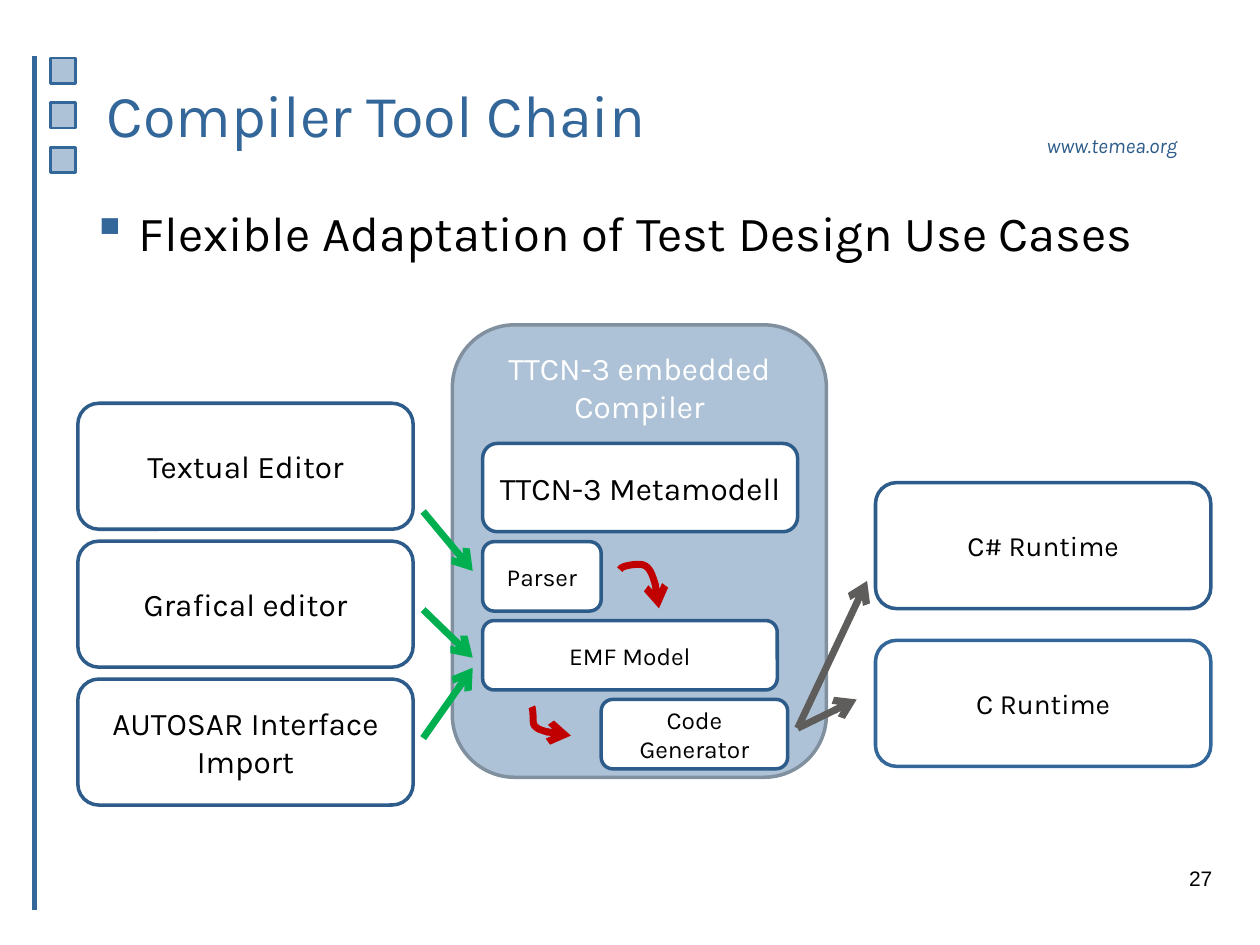
from lxml.etree import SubElement
from pptx import Presentation
from pptx.dml.color import RGBColor
from pptx.enum.shapes import MSO_CONNECTOR, MSO_SHAPE
from pptx.enum.text import MSO_ANCHOR, PP_ALIGN
from pptx.oxml.ns import qn
from pptx.util import Cm, Pt

BLUE = RGBColor(0x33, 0x66, 0x99)
DARK_BLUE = RGBColor(0x2D, 0x5C, 0x8A)
PALE_BLUE = RGBColor(0xAE, 0xC2, 0xD7)
SLATE = RGBColor(0x81, 0x90, 0x9F)
GRAY = RGBColor(0x5F, 0x5C, 0x5C)
GREEN = RGBColor(0x00, 0xB0, 0x50)
RED = RGBColor(0xC0, 0x00, 0x00)
BLACK = RGBColor(0, 0, 0)
WHITE = RGBColor(255, 255, 255)

# Content; all places and sizes are in centimetres
TITLE = "Compiler Tool Chain"
WEBSITE = "www.temea.org"
BULLET = "Flexible Adaptation of Test Design Use Cases"
PAGE_NUMBER = "27"
COMPILER = "TTCN-3 embedded Compiler"
EDITORS = ["Textual Editor", "Grafical editor", "AUTOSAR Interface Import"]
RUNTIMES = [("C# Runtime", DARK_BLUE), ("C Runtime", BLUE)]
METAMODEL = "TTCN-3 Metamodell"
STAGES = [  # text, left, width
    ("Parser", 9.73, 2.39),
    ("EMF Model", 9.73, 5.94),
    ("Code Generator", 12.12, 3.76),
]
EDITOR_ARROWS = [(10.31, 11.51), (12.29, 13.26), (14.88, 13.46)]  # start y, end y
RUNTIME_ARROW_START = (16.08, 14.68)
RUNTIME_ARROW_ENDS = [(17.48, 11.71), (17.27, 14.1)]
PARSER_CURVE = ((12.5, 11.48), (13.28, 12.27))
MODEL_CURVE = ((10.72, 14.25), (11.51, 14.83))

presentation = Presentation()
presentation.slide_width, presentation.slide_height = Cm(25.4), Cm(19.05)
slide = presentation.slides.add_slide(presentation.slide_layouts[6])


def write(holder, text, size=18, color=BLACK, font="Karla", italic=False,
          align=PP_ALIGN.LEFT, anchor=MSO_ANCHOR.TOP, bullet=None):
    frame = holder.text_frame
    frame.word_wrap = True
    frame.vertical_anchor = anchor
    paragraph = frame.paragraphs[0]
    paragraph.alignment = align
    if bullet:
        properties = paragraph._p.get_or_add_pPr()
        properties.set("marL", str(Cm(0.95)))
        properties.set("indent", str(-Cm(0.95)))
        bullet_color = SubElement(properties, qn("a:buClr"))
        SubElement(bullet_color, qn("a:srgbClr"), val=str(BLUE))
        SubElement(properties, qn("a:buChar"), char=bullet)
    run = paragraph.add_run()
    run.text = text
    run.font.size = Pt(size)
    run.font.name = font
    run.font.italic = italic
    run.font.color.rgb = color


def add_label(place, text, **style):
    write(slide.shapes.add_textbox(*map(Cm, place)), text, **style)


def add_box(place, fill, outline, kind=MSO_SHAPE.ROUNDED_RECTANGLE, weight=2):
    box = slide.shapes.add_shape(kind, *map(Cm, place))
    box.shadow.inherit = False
    box.fill.solid()
    box.fill.fore_color.rgb = fill
    box.line.color.rgb = outline
    box.line.width = Pt(weight)
    return box


def add_node(place, text, size, outline=DARK_BLUE):
    node = add_box(place, WHITE, outline)
    node.text_frame.margin_left = node.text_frame.margin_right = Cm(0.2)
    write(node, text, size=size, align=PP_ALIGN.CENTER, anchor=MSO_ANCHOR.MIDDLE)


def add_line(start, end, color, weight=4, arrow=True, bend=None):
    kind = MSO_CONNECTOR.STRAIGHT if bend is None else MSO_CONNECTOR.CURVE
    line = slide.shapes.add_connector(kind, *map(Cm, start + end))
    line.line.color.rgb = color
    line.line.width = Pt(weight)
    properties = line._element.spPr
    if arrow:
        SubElement(line.line._get_or_add_ln(), qn("a:tailEnd"), type="arrow")
    SubElement(properties, qn("a:effectLst"))
    if bend is not None:
        guides = properties.find(qn("a:prstGeom")).get_or_add_avLst()
        SubElement(guides, qn("a:gd"), name="adj1", fmla=f"val {bend}")
    return line


# Side rule and squares
add_line((0.69, 1.12), (0.69, 18.34), BLUE, weight=3, arrow=False)
for row in range(3):
    add_box((1.02, 1.17 + 0.9 * row, 0.51, 0.51), PALE_BLUE, BLUE,
            kind=MSO_SHAPE.RECTANGLE, weight=1.5)

# Heading, bullet and page number
add_label((20.85, 2.54, 3.96, 0.76), WEBSITE, size=12, color=DARK_BLUE, italic=True)
add_label((1.9, 0.71, 18.6, 3.18), TITLE, size=34, color=BLUE, anchor=MSO_ANCHOR.MIDDLE)
add_label((1.6, 3.96, 22.8, 2.41), BULLET, size=28, bullet="▪")
add_label((18.77, 17.32, 5.92, 0.99), PAGE_NUMBER, size=12, font="Arial",
          align=PP_ALIGN.RIGHT)

# Compiler, with runtimes to the right and editors to the left
compiler = add_box((9.12, 6.55, 7.54, 9.12), PALE_BLUE, SLATE)
write(compiler, COMPILER, color=WHITE, align=PP_ALIGN.CENTER)
for row, (runtime, outline) in enumerate(RUNTIMES):
    add_node((17.65, 9.73 + 3.18 * row, 6.76, 2.54), runtime, 16, outline)
for row, editor in enumerate(EDITORS):
    add_node((1.57, 8.13 + 2.78 * row, 6.76, 2.54), editor, 18)

# Parts inside the compiler
add_node((9.73, 8.94, 6.35, 1.78), METAMODEL, 18)
for row, (stage, left, width) in enumerate(STAGES):
    add_node((left, 10.92 + 1.59 * row, width, 1.4), stage, 14)

# Arrows between the parts
for end in RUNTIME_ARROW_ENDS:
    add_line(RUNTIME_ARROW_START, end, GRAY)
for start_y, end_y in EDITOR_ARROWS:
    add_line((8.53, start_y), (9.53, end_y), GREEN)
parser_curve = add_line(*PARSER_CURVE, RED, bend=-14000)
parser_curve.rotation = 270 if hasattr(parser_curve, "rotation") else 0
turn = parser_curve._element.spPr.find(qn("a:xfrm"))
turn.set("rot", str(270 * 60000))
turn.set("flipH", "1")
add_line(*MODEL_CURVE, RED, bend=3800)

presentation.save("out.pptx")
